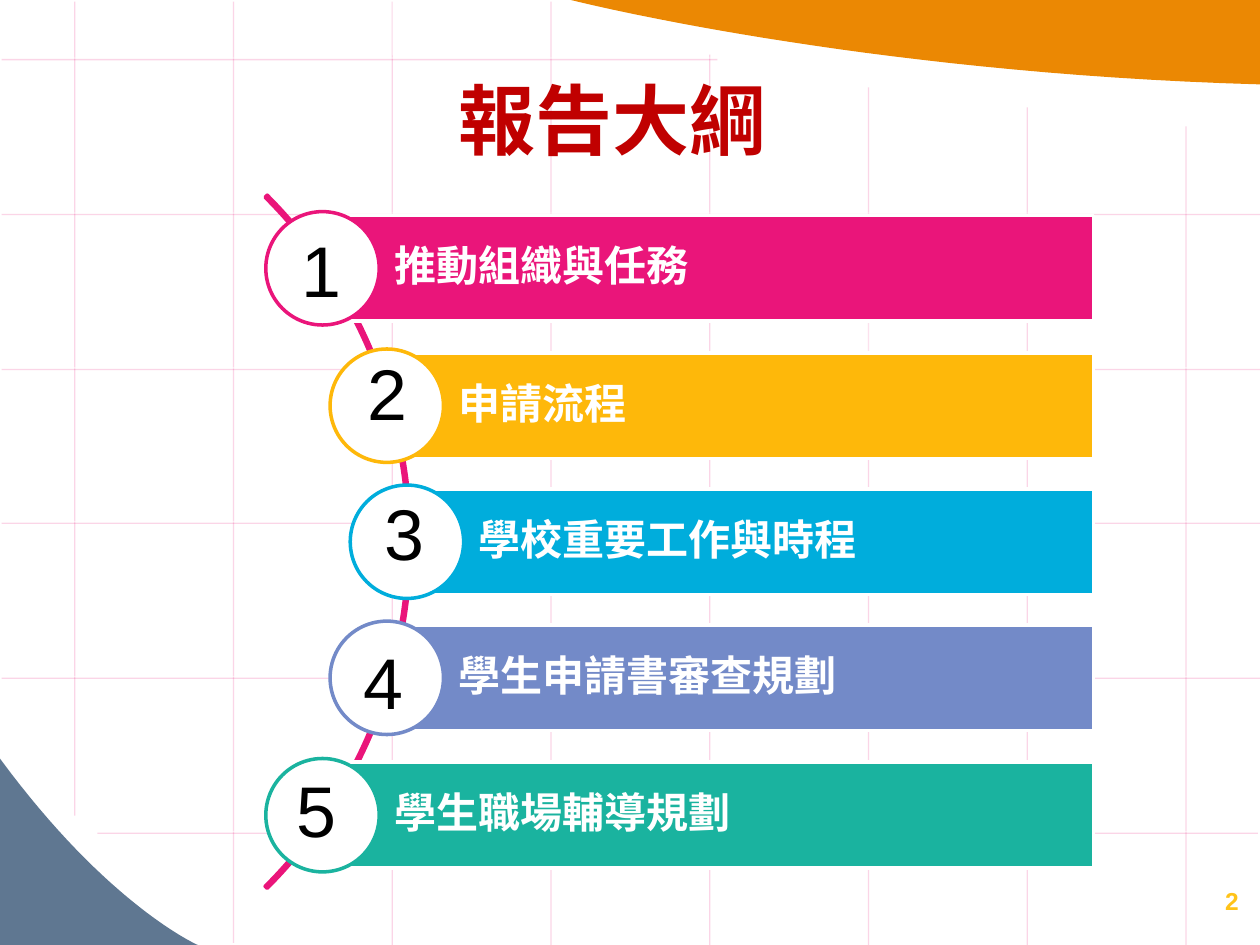
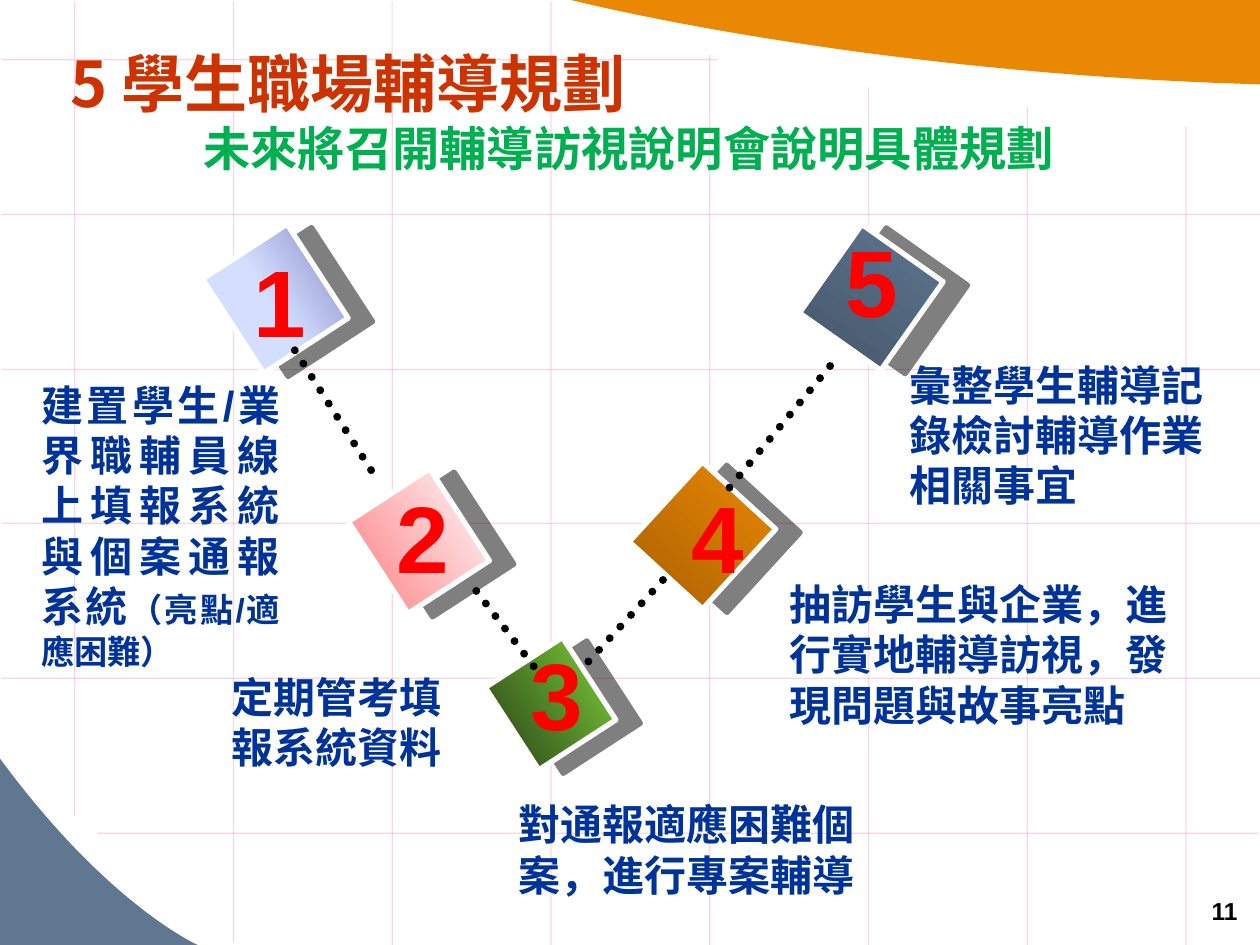
import math
from dataclasses import dataclass

import lxml.etree
import pptx
import pptx.dml.color
import pptx.enum.dml
import pptx.enum.shapes
import pptx.enum.text
import pptx.oxml.ns
import pptx.util

PX = 9144  # EMU per px, 100 px to the inch
SLIDE_WIDTH, SLIDE_HEIGHT = 1000, 750
SHAPE = pptx.enum.shapes.MSO_SHAPE
ALIGN = pptx.enum.text.PP_ALIGN
ANCHOR = pptx.enum.text.MSO_ANCHOR
qn = pptx.oxml.ns.qn


@dataclass(frozen=True)
class Theme:
    latin: str = "Arial"
    chinese: str = "Noto Sans CJK SC"
    white: str = "FFFFFF"
    black: str = "000000"
    orange: str = "EB8803"
    slate: str = "5F7791"
    pink: str = "EA157A"
    title: str = "C00000"
    heading: str = "CC3300"
    subtitle: str = "00B050"
    body: str = "003399"
    step: str = "FF0000"
    page: str = "FFC319"
    title_size: int = 44
    heading_size: int = 36
    subtitle_size: int = 27
    body_size: int = 24
    note_size: int = 19
    number_size: int = 41
    step_size: int = 54
    page_size: int = 14


THEME = Theme()

# Background content: column (top, bottom), row (left, right), panel (place, opacity)
GRID_COLUMNS = [(0, 646), (0, 747), (0, 750), (0, 750),
                (42, 750), (68, 750), (84, 750), (99, 750)]
GRID_ROWS = [(0, 568), (0, 1000), (0, 1000), (0, 1000), (0, 1000), (76, 997)]
PANELS = [((438, 295, 123, 118), 25), ((816, 540, 122, 118), 30),
          ((60, 416, 123, 118), 20), ((690, 663, 123, 87), 20),
          ((311, 0, 123, 44), 40), ((312, 540, 123, 118), 30),
          ((689, 171, 123, 118), 30)]
# Bands: Bezier control points, then the corners that close the outline
BANDS = [([(157, 750), (157, 750), (86, 719), (0, 602)], [(0, 750)], THEME.slate),
         ([(453, 0), (453, 0), (680, 58), (1000, 67)], [(1000, 0)], THEME.orange)]

# Outline: label, colour, place of the number, alignment of the number
TOPICS = [
    ("推動組織與任務", THEME.pink, (224, 174, 63, 79), ALIGN.CENTER),
    ("申請流程", "FEB80A", (272, 272, 71, 79), ALIGN.CENTER),
    ("學校重要工作與時程", "00ADDC", (295, 383, 63, 79), ALIGN.LEFT),
    ("學生申請書審查規劃", "738AC8", (279, 501, 71, 79), ALIGN.LEFT),
    ("學生職場輔導規劃", "1AB39F", (216, 603, 71, 79), ALIGN.CENTER),
]

# Steps: diamond place, rotation, gradient stops, place of the number
STEPS = [
    ((174, 197, 89, 80), 57,
     [(0, "8488C4"), (53, "D4DEFF"), (83, "D4DEFF"), (100, "96AB94")], (191, 188)),
    ((289, 391, 87, 77), 57, [(0, "FCFCFC"), (100, "FF7C80")], (305, 375)),
    ((398, 522, 78, 73), 57, [(0, "7FD13B"), (100, "263E17")], (411, 500)),
    ((518, 382, 79, 86), 42.5, [(0, "EB8803"), (100, "A86102")], (539, 375)),
    ((652, 193, 79, 86), 35.2, [(0, "5F7791"), (100, "445568")], (661, 172)),
]
STEP_LINKS = [(234, 278, 297, 377), (378, 469, 426, 532),
              (467, 525, 532, 454), (579, 387, 665, 283)]
SYSTEM_NOTE = ((23, 296, 209, 244),
               "建置學生/業界職輔員線上填報系統與個案通報系統", "（亮點/適應困難）")
STEP_NOTES = [
    ((174, 528, 214, 91), "定期管考填報系統資料"),
    ((402, 629, 303, 91), "對通報適應困難個案，進行專案輔導"),
    ((617, 454, 335, 131), "抽訪學生與企業，進行實地輔導訪視，發現問題與故事亮點"),
    ((712, 280, 284, 131), "彙整學生輔導記錄檢討輔導作業相關事宜"),
]


def emu(*lengths):
    return [round(length * PX) for length in lengths]


def rgb(code):
    return pptx.dml.color.RGBColor.from_string(code)


def child(parent, tag, **attributes):
    return lxml.etree.SubElement(parent, qn(tag), attributes)


def fade(shape, percent):
    for colour in shape.element.spPr.iter(qn("a:srgbClr")):
        child(colour, "a:alpha", val=str(percent * 1000))


def add_shadow(shape, colour, percent, distance, angle):
    """Hard-edged shadow; distance in points, angle in degrees."""
    effects = shape.element.spPr.find(qn("a:effectLst"))
    shadow = child(effects, "a:outerShdw", blurRad="0",
                   dist=str(pptx.util.Pt(distance)), dir=str(angle * 60000),
                   algn="ctr", rotWithShape="0")
    child(child(shadow, "a:srgbClr", val=colour), "a:alpha", val=str(percent * 1000))


def style(shape, fill=None, line=None, width=2):
    shape.shadow.inherit = False
    if fill:
        shape.fill.solid()
        shape.fill.fore_color.rgb = rgb(fill)
    else:
        shape.fill.background()
    if line:
        shape.line.color.rgb = rgb(line)
        shape.line.width = pptx.util.Pt(width)
    else:
        shape.line.fill.background()
    return shape


def add_box(page, kind, place, **look):
    return style(page.shapes.add_shape(kind, *emu(*place)), **look)


def add_line(page, ends, colour, width):
    line = page.shapes.add_connector(
        pptx.enum.shapes.MSO_CONNECTOR.STRAIGHT, *emu(*ends))
    line.line.color.rgb = rgb(colour)
    line.line.width = pptx.util.Pt(width)
    child(line.element.spPr, "a:effectLst")
    return line


def write(frame, text, size=THEME.body_size, colour=THEME.body, bold=True,
          font=THEME.latin, align=ALIGN.LEFT, spacing=None, join=False):
    """Add a span, in a new paragraph unless the last one is empty or join is set."""
    para = frame.paragraphs[-1]
    if para.runs and not join:
        para = frame.add_paragraph()
    if not join:
        para.alignment = align
        para.line_spacing = spacing
    span = para.add_run()
    span.text = text
    span.font.size = pptx.util.Pt(size)
    span.font.bold = bold
    span.font.color.rgb = rgb(colour)
    span.font.name = font
    child(span.font._element, "a:ea", typeface=THEME.chinese)


def set_frame(box, anchor=ANCHOR.TOP, insets=(10, 5, 10, 5)):
    frame = box.text_frame
    frame.word_wrap = True
    frame.vertical_anchor = anchor
    (frame.margin_left, frame.margin_top,
     frame.margin_right, frame.margin_bottom) = emu(*insets)
    return frame


def add_text(page, place, text, anchor=ANCHOR.TOP, **look):
    frame = set_frame(page.shapes.add_textbox(*emu(*place)), anchor)
    write(frame, text, **look)
    return frame


def bezier(points, steps=32):
    for step in range(steps + 1):
        t = step / steps
        weights = [math.comb(3, i) * t ** i * (1 - t) ** (3 - i) for i in range(4)]
        yield tuple(sum(w * p[axis] for w, p in zip(weights, points))
                    for axis in (0, 1))


def add_band(page, curve, corners, colour):
    outline = [emu(*point) for point in [*bezier(curve), *corners]]
    builder = page.shapes.build_freeform(*outline[0])
    builder.add_line_segments(outline[1:], close=True)
    style(builder.convert_to_shape(), fill=colour)


def build_background(page, layout):
    """Draw the shared parts on a page, then hand them to its layout."""
    slate, orange = BANDS
    add_band(page, *slate)
    columns = [(58 + 126 * i, top, 58 + 126 * i, bottom)
               for i, (top, bottom) in enumerate(GRID_COLUMNS)]
    rows = [(right, round(46 + 122.8 * i), left, round(46 + 122.8 * i))
            for i, (left, right) in enumerate(GRID_ROWS)]
    for ends in columns + rows:
        line = add_line(page, ends, THEME.white, 0.75)
        fade(line, 50)
        add_shadow(line, THEME.pink, 35, 1.4, 45)
    for place, opacity in PANELS:
        fade(add_box(page, SHAPE.RECTANGLE, place, fill=THEME.white), opacity)
    add_band(page, *orange)
    for placeholder in list(layout.placeholders):
        layout.shapes.element.remove(placeholder.element)
    for shape in list(page.shapes):
        layout.shapes.element.append(shape.element)


def build_outline(page):
    add_text(page, (36, 44, 900, 101), "報告大綱", anchor=ANCHOR.MIDDLE,
             size=THEME.title_size, colour=THEME.title, font=THEME.chinese,
             align=ALIGN.CENTER)
    # Arc that the circles follow
    centre_x, centre_y, radius, track = -63, 430, 389, 386
    arc = add_box(page, SHAPE.BLOCK_ARC,
                  (centre_x - radius, centre_y - radius, 2 * radius, 2 * radius),
                  line=THEME.pink)
    for index, value in enumerate((189, 27, 0.003)):
        arc.adjustments[index] = value
    # Bars and circles
    bar_right, bar_height, diameter, pitch = 868, 84, 90, 108.4
    for index, (label, colour, _, _) in enumerate(TOPICS):
        offset = (index - 2) * pitch
        x = round(centre_x + math.sqrt(track ** 2 - offset ** 2))
        y = round(centre_y + offset)
        bar = add_box(page, SHAPE.RECTANGLE,
                      (x, y - bar_height // 2, bar_right - x, bar_height),
                      fill=colour, line=THEME.white)
        write(set_frame(bar, ANCHOR.MIDDLE, (57, 7, 7, 7)), label,
              colour=THEME.white, font=THEME.chinese, spacing=0.9)
        add_box(page, SHAPE.OVAL,
                (x - diameter // 2, y - diameter // 2, diameter, diameter),
                fill=THEME.white, line=colour)
    # Numbers
    for number, (_, _, place, align) in enumerate(TOPICS, 1):
        add_text(page, place, str(number), size=THEME.number_size,
                 colour=THEME.black, bold=False, align=align)
    add_text(page, (760, 698, 233, 44), "2", size=THEME.page_size,
             colour=THEME.page, align=ALIGN.RIGHT)


def add_diamond(page, place, rotation, stops):
    diamond = add_box(page, SHAPE.RECTANGLE, place, line=THEME.white, width=3)
    diamond.rotation = rotation
    diamond.fill.gradient()
    diamond.fill.gradient_angle = 270
    stop_list = diamond.element.spPr.find(".//" + qn("a:gsLst"))
    for stop in list(stop_list):
        stop_list.remove(stop)
    for position, colour in stops:
        child(child(stop_list, "a:gs", pos=str(position * 1000)),
              "a:srgbClr", val=colour)
    add_shadow(diamond, THEME.black, 50, 14.1, 8)


def build_guidance(page):
    frame = add_text(page, (46, 52, 906, 71), "5 學生職場輔導規劃",
                     anchor=ANCHOR.MIDDLE, size=THEME.heading_size,
                     colour=THEME.heading, font=THEME.chinese)
    write(frame, "未來將召開輔導訪視說明會說明具體規劃", size=THEME.subtitle_size,
          colour=THEME.subtitle, font=THEME.chinese, align=ALIGN.CENTER)
    # Diamonds and the dotted path between them
    for place, rotation, stops, _ in STEPS:
        add_diamond(page, place, rotation, stops)
    for ends in STEP_LINKS:
        link = add_line(page, ends, THEME.black, 4.5)
        link.line.dash_style = pptx.enum.dml.MSO_LINE.ROUND_DOT
        link.element.spPr.find(qn("a:ln")).set("cap", "rnd")
    # Notes
    place, text, remark = SYSTEM_NOTE
    frame = add_text(page, place, text, align=ALIGN.JUSTIFY)
    write(frame, remark, size=THEME.note_size, join=True)
    for place, text in STEP_NOTES:
        add_text(page, place, text)
    # Numbers
    for number, (_, _, _, corner) in enumerate(STEPS, 1):
        add_text(page, (*corner, 55, 101), str(number),
                 size=THEME.step_size, colour=THEME.step)
    add_text(page, (759, 706, 233, 39), "11", size=THEME.page_size,
             colour=THEME.black, align=ALIGN.RIGHT)


def main():
    deck = pptx.Presentation()
    deck.slide_width, deck.slide_height = emu(SLIDE_WIDTH, SLIDE_HEIGHT)
    blank = deck.slide_layouts[6]
    outline, guidance = [deck.slides.add_slide(blank) for _ in range(2)]
    build_background(outline, blank)
    build_outline(outline)
    build_guidance(guidance)
    deck.save("out.pptx")


if __name__ == "__main__":
    main()
